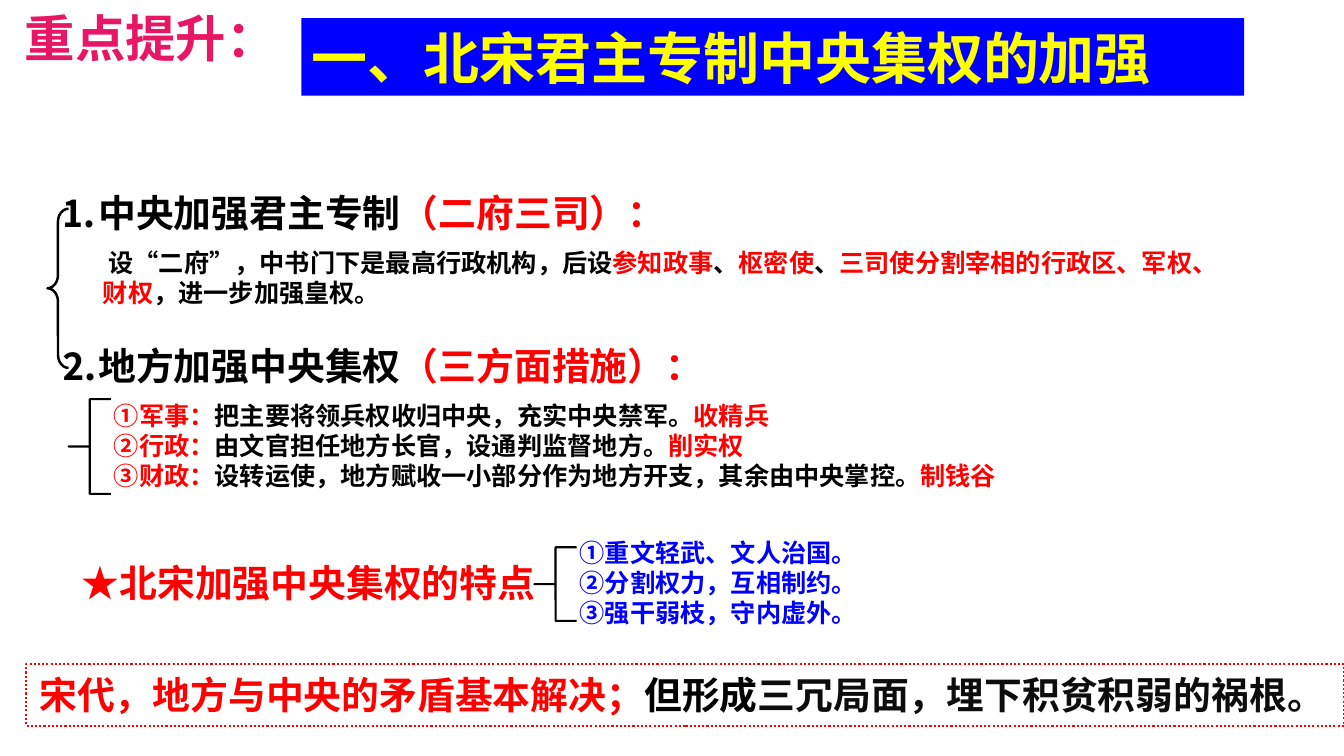
from pptx import Presentation
from pptx.dml.color import RGBColor
from pptx.enum.dml import MSO_LINE
from pptx.enum.shapes import MSO_SHAPE
from pptx.enum.text import MSO_ANCHOR, MSO_AUTO_SIZE, PP_ALIGN
from pptx.util import Inches, Pt

RECT, BRACE = MSO_SHAPE.RECTANGLE, MSO_SHAPE.LEFT_BRACE
DOTS = MSO_LINE.ROUND_DOT
LEFT, CENTER = PP_ALIGN.LEFT, PP_ALIGN.CENTER
TOP, MIDDLE = MSO_ANCHOR.TOP, MSO_ANCHOR.MIDDLE
FIXED = MSO_AUTO_SIZE.NONE
NOTO = "Noto Sans CJK SC"
RED, BLACK, BLUE, YELLOW = "FF0000", "000000", "0000FF", "FFFF00"
WHITE, INK, PINK = "FFFFFF", "0D0D0D", "E81766"


def color(code):
    return RGBColor.from_string(code)


def write(frame, rows, size, face=NOTO, wrap=True, align=LEFT,
          space=1.0, pad=(0.13, 0.07), anchor=TOP):
    frame.word_wrap = wrap
    frame.auto_size = FIXED
    frame.vertical_anchor = anchor
    frame.margin_left = frame.margin_right = Inches(pad[0])
    frame.margin_top = frame.margin_bottom = Inches(pad[1])
    for i, row in enumerate(rows):
        para = frame.add_paragraph() if i else frame.paragraphs[0]
        para.alignment = align
        para.line_spacing = space
        para.space_before = Pt(0)
        para.font.size = Pt(size)
        para.font.bold = True
        faces = {part[2] if len(part) > 2 else face for part in row}
        if len(faces) == 1:
            para.font.name = faces.pop()
        for text, code, *own in row:
            run = para.add_run()
            run.text = text
            run.font.color.rgb = color(code)
            if faces:
                run.font.name = own[0] if own else face


def add_text(slide, at, rows, size, **style):
    box = slide.shapes.add_textbox(*map(Inches, at))
    write(box.text_frame, rows, size, **style)


def add_brace(slide, at, curve, width):
    brace = slide.shapes.add_shape(BRACE, *map(Inches, at))
    brace.shadow.inherit = False
    brace.adjustments[0] = curve
    brace.adjustments[1] = 0.5
    brace.fill.background()
    brace.line.color.rgb = color(BLACK)
    brace.line.width = Pt(width)


def add_panel(slide, at, row, size):
    panel = slide.shapes.add_shape(RECT, *map(Inches, at))
    panel.shadow.inherit = False
    panel.fill.solid()
    panel.fill.fore_color.rgb = color(WHITE)
    panel.line.color.rgb = color(RED)
    panel.line.width = Pt(1.5)
    panel.line.dash_style = DOTS
    write(panel.text_frame, [row], size, face="Arial")


def set_title(slide, at, text):
    title = slide.shapes.title
    title.left, title.top, title.width, title.height = map(Inches, at)
    title.fill.solid()
    title.fill.fore_color.rgb = color(BLUE)
    write(title.text_frame, [[(text, YELLOW)]], 40,
          pad=(0.1, 0.05), anchor=MIDDLE)


def main():
    deck = Presentation()
    deck.slide_width, deck.slide_height = Inches(13.33), Inches(7.5)
    slide = deck.slides.add_slide(deck.slide_layouts[5])

    set_title(slide, (2.99, 0.18, 9.35, 0.77), "一、北宋君主专制中央集权的加强")
    add_text(slide, (0.26, 0.02, 2.47, 0.74), [[("重点提升：", PINK)]], 36,
             wrap=False, align=CENTER, pad=(0.1, 0.05))

    add_text(slide, (0.47, 1.86, 6.3, 0.54),
             [[("⒈中央加强君主专制", BLACK), ("（二府三司）：", RED)]],
             27, wrap=False, space=0.9)
    add_text(slide, (0.89, 2.38, 11.44, 0.74), [[
        (" 设“二府”，中书门下是最高行政机构，后设", BLACK),
        ("参知政事", RED), ("、", BLACK), ("枢密使", RED), ("、", BLACK),
        ("三司使分割宰相的行政区、军权、财权", RED),
        ("，进一步加强皇权。", BLACK)]], 18)

    add_text(slide, (0.47, 3.33, 6.74, 0.59),
             [[("⒉地方加强中央集权", BLACK), ("（三方面措施）：", RED)]],
             27, wrap=False)
    steps = [
        ("①军事：", "把主要将领兵权收归中央，充实中央禁军。", "收精兵"),
        ("②行政：", "由文官担任地方长官，设通判监督地方。", "削实权"),
        ("③财政：", "设转运使，地方赋收一小部分作为地方开支，其余由中央掌控。", "制钱谷"),
    ]
    add_text(slide, (1, 3.9, 12.3, 1.04),
             [[(head, RED), (body, BLACK), (gist, RED, NOTO)]
              for head, body, gist in steps], 18, face="Calibri")

    add_text(slide, (0.68, 5.53, 5.04, 0.54),
             [[("★", RED, "Calibri"), ("北宋加强中央集权的特点", RED)]],
             27, space=0.9)
    traits = ["①重文轻武、文人治国。", "②分割权力，互相制约。", "③强干弱枝，守内虚外。"]
    add_text(slide, (5.62, 5.26, 6.67, 1.04),
             [[(trait, BLUE)] for trait in traits], 18, face="Calibri")

    add_brace(slide, (0.47, 2.07, 0.21, 1.58), 0.62, 1.75)
    add_brace(slide, (0.68, 3.96, 0.42, 0.94), 0, 1.5)
    add_brace(slide, (5.3, 5.43, 0.42, 0.73), 0, 1.5)

    add_panel(slide, (0.26, 6.59, 13.07, 0.61), [
        ("宋代，地方与中央的矛盾基本解决；", RED), ("但形成", BLACK),
        ("三冗局面，埋下积贫积弱的祸根。", INK)], 27)

    deck.save("out.pptx")


if __name__ == "__main__":
    main()
